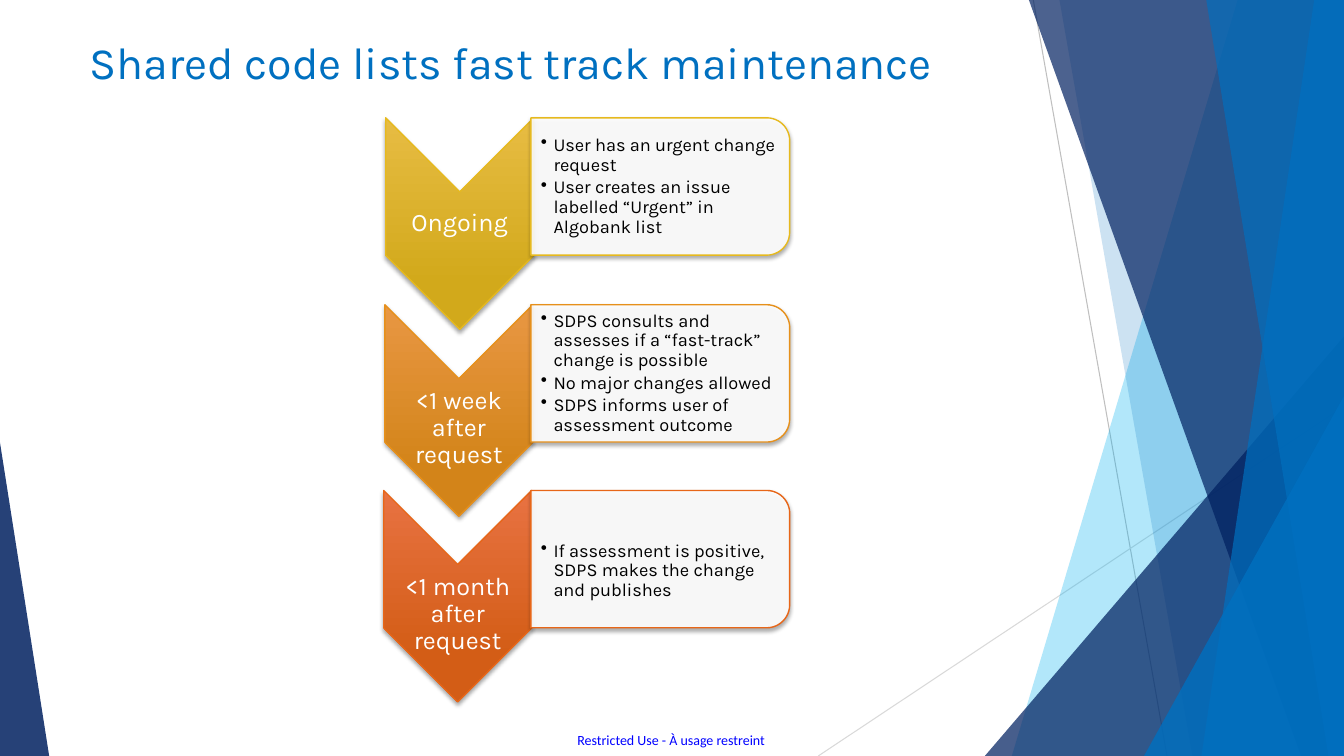
import lxml.etree
import pptx
import pptx.dml.color
import pptx.enum.shapes
import pptx.enum.text
import pptx.oxml
import pptx.oxml.ns
import pptx.util

Cm, Pt = pptx.util.Cm, pptx.util.Pt
SHAPE = pptx.enum.shapes.MSO_SHAPE
ALIGN = pptx.enum.text.PP_ALIGN
ANCHOR = pptx.enum.text.MSO_ANCHOR
qn = pptx.oxml.ns.qn
NS = pptx.oxml.ns.nsdecls("a")

SLIDE_W, SLIDE_H = 33.87, 19.05
COLORS = {
    "white": "FFFFFF", "black": "000000", "footer": "0000FF",
    "navy": "002060", "blue": "0070C0", "cyan": "00B0F0",
    "steep_line": "BFBFBF", "flat_line": "D9D9D9",
}

# Backdrop facets, back to front: (top x, bottom x) bands, (left x, top y) triangles
FACETS = [
    ("band", 10.57, 4.88, "cyan", 30),
    ("band", 6.08, 9.43, "blue", 20),
    ("triangle", 4.2, 8.48, "navy", 72),
    ("band", 5.31, 12.17, "navy", 70),
    ("band", 12.5, 9.66, "blue", 70),
    ("band", 9.78, 12.86, "blue", 65),
    ("triangle", 8.21, 9.98, "blue", 80),
]

# Each stage: place, outline, gradient ends, label and tasks.
# The drops move the label and the tasks below the middle of their shapes.
STAGES = [
    {"box": (9.72, 2.97), "outline": "E6B91E", "gradient": ("E7BC43", "D2A91B"),
     "label": "Ongoing", "label_drop": 0, "tasks_drop": 0,
     "tasks": ["User has an urgent change request",
               "User creates an issue labelled “Urgent” in Algobank list"]},
    {"box": (9.7, 7.68), "outline": "E6901B", "gradient": ("E89743", "D38419"),
     "label": "<1 week after request", "label_drop": 0.45, "tasks_drop": 0,
     "tasks": ["SDPS consults and assesses if a “fast-track” change is possible",
               "No major changes allowed",
               "SDPS informs user of assessment outcome"]},
    {"box": (9.67, 12.36), "outline": "E76618", "gradient": ("E87242", "D35D16"),
     "label": "<1 month after request", "label_drop": 0.45, "tasks_drop": 0.3,
     "tasks": ["If assessment is positive, SDPS makes the change and publishes"]},
]


def rgb(value):
    return pptx.dml.color.RGBColor.from_string(value)


def apply(target, formats):
    for name, value in formats.items():
        setattr(target, name, value)


def fill_solid(shape, color, opacity):
    shape.fill.solid()
    shape.fill.fore_color.rgb = rgb(color)
    tint = shape.fill._xPr.find(qn("a:solidFill"))[0]
    lxml.etree.SubElement(tint, qn("a:alpha"), val=str(opacity * 1000))


def write(slide, box, lines, size, color, font="Karla", frame=None, spacing=None, bullet=False):
    text = slide.shapes.add_textbox(*map(Cm, box)).text_frame
    apply(text, {"word_wrap": True, **(frame or {})})
    for index, line in enumerate(lines):
        paragraph = text.paragraphs[0] if index == 0 else text.add_paragraph()
        apply(paragraph, spacing or {})
        if bullet:
            properties = paragraph._p.get_or_add_pPr()
            properties.set("marL", str(Cm(0.32)))
            properties.set("indent", str(-Cm(0.32)))
            lxml.etree.SubElement(properties, qn("a:buChar"), char="•")
        run = paragraph.add_run()
        run.text = line
        apply(run.font, {"name": font, "size": Pt(size)})
        run.font.color.rgb = rgb(color)


def draw_line(slide, start, end, color):
    line = slide.shapes.add_connector(
        pptx.enum.shapes.MSO_CONNECTOR.STRAIGHT, *map(Cm, start + end))
    line.line.color.rgb = rgb(color)
    line.line.width = Pt(0.75)
    lxml.etree.SubElement(line._element.spPr, qn("a:effectLst"))


def draw_triangle(slide, box, peak, color, opacity):
    triangle = slide.shapes.add_shape(SHAPE.ISOSCELES_TRIANGLE, *map(Cm, box))
    triangle.adjustments[0] = peak
    return finish_facet(triangle, color, opacity)


def finish_facet(facet, color, opacity):
    facet.shadow.inherit = False
    facet.line.fill.background()
    fill_solid(facet, color, opacity)


def draw_backdrop(slide, box):
    left, top, width, height = box
    right, bottom = left + width, top + height
    # Thin crossing lines
    draw_line(slide, (left + 5.42, top), (left + 8.79, bottom), COLORS["steep_line"])
    draw_line(slide, (right, top + 10.24), (left, bottom), COLORS["flat_line"])
    # Translucent facets
    for kind, first, second, color, opacity in FACETS:
        if kind == "triangle":
            corner = (left + first, top + second, width - first, height - second)
            draw_triangle(slide, corner, 1, COLORS[color], opacity)
            continue
        outline = slide.shapes.build_freeform(Cm(left + first), Cm(top))
        outline.add_line_segments(
            [(Cm(right), Cm(top)), (Cm(right), Cm(bottom)), (Cm(left + second), Cm(bottom))])
        finish_facet(outline.convert_to_shape(), COLORS[color], opacity)


def draw_turned(slide, preset, box, outline):
    """Add a preset turned a quarter so that it covers the given box."""
    left, top, width, height = box
    shift = (width - height) / 2
    shape = slide.shapes.add_shape(
        preset, Cm(left + shift), Cm(top - shift), Cm(height), Cm(width))
    shape.rotation = 90
    shape.line.color.rgb = rgb(outline)
    shape.line.width = Pt(1)
    shape.shadow.inherit = False
    shape._element.spPr.find(qn("a:effectLst")).append(pptx.oxml.parse_xml(
        f'<a:outerShdw {NS} blurRad="38100" dist="25400" dir="5400000" rotWithShape="0">'
        '<a:srgbClr val="000000"><a:alpha val="35000"/></a:srgbClr></a:outerShdw>'))
    return shape


def draw_stage(slide, box, stage):
    left, top, width, height = box
    tight = {"vertical_anchor": ANCHOR.MIDDLE, "margin_left": Cm(0.03),
             "margin_right": Cm(0.03), "margin_top": Cm(0.03), "margin_bottom": Cm(0.03)}
    # Chevron with its time label
    chevron = draw_turned(slide, SHAPE.CHEVRON, (left, top, 3.73, height), stage["outline"])
    light, dark = stage["gradient"]
    chevron._element.spPr.find(qn("a:prstGeom")).addnext(pptx.oxml.parse_xml(
        f'<a:gradFill {NS} rotWithShape="0"><a:gsLst>'
        f'<a:gs pos="0"><a:srgbClr val="{light}"/></a:gs>'
        f'<a:gs pos="78000"><a:srgbClr val="{dark}"/></a:gs>'
        '</a:gsLst><a:lin ang="5400000" scaled="0"/></a:gradFill>'))
    write(slide, (left, top + 1.87 + stage["label_drop"], 3.73, 1.6), [stage["label"]],
          18, COLORS["white"], frame=tight,
          spacing={"alignment": ALIGN.CENTER, "line_spacing": 0.9})
    # Panel with its tasks
    panel_left = 13.38
    panel = draw_turned(slide, SHAPE.ROUND_2_SAME_RECTANGLE,
                        (panel_left, top, left + width - panel_left, 3.46), stage["outline"])
    fill_solid(panel, COLORS["white"], 90)
    write(slide, (panel_left, top + 0.17 + stage["tasks_drop"], 6.35, 3.12), stage["tasks"],
          13, COLORS["black"], frame={**tight, "margin_left": Cm(0.25)},
          spacing={"line_spacing": 0.9, "space_after": Pt(2)}, bullet=True)


def main():
    deck = pptx.Presentation()
    apply(deck, {"slide_width": Cm(SLIDE_W), "slide_height": Cm(SLIDE_H)})
    slide = deck.slides.add_slide(deck.slide_layouts[6])

    # Backdrop and left wedge
    draw_backdrop(slide, (20.62, 0, SLIDE_W - 20.62, SLIDE_H))
    draw_triangle(slide, (0, 11.15, 1.24, 7.9), 0, COLORS["navy"], 85)

    # Footer and title
    flush = dict.fromkeys(("margin_left", "margin_right", "margin_top", "margin_bottom"), 0)
    write(slide, (14.55, 18.44, 4.85, 0.43), ["Restricted Use - À usage restreint"],
          10, COLORS["footer"], font="Calibri", frame={**flush, "word_wrap": False})
    write(slide, (2.01, 0.74, 23.88, 3.66), ["Shared code lists fast track maintenance"],
          32, COLORS["blue"])

    # Stages
    for stage in STAGES:
        left, top = stage["box"]
        draw_stage(slide, (left, top, 19.9 - left, 5.33), stage)

    deck.save("out.pptx")


if __name__ == "__main__":
    main()
